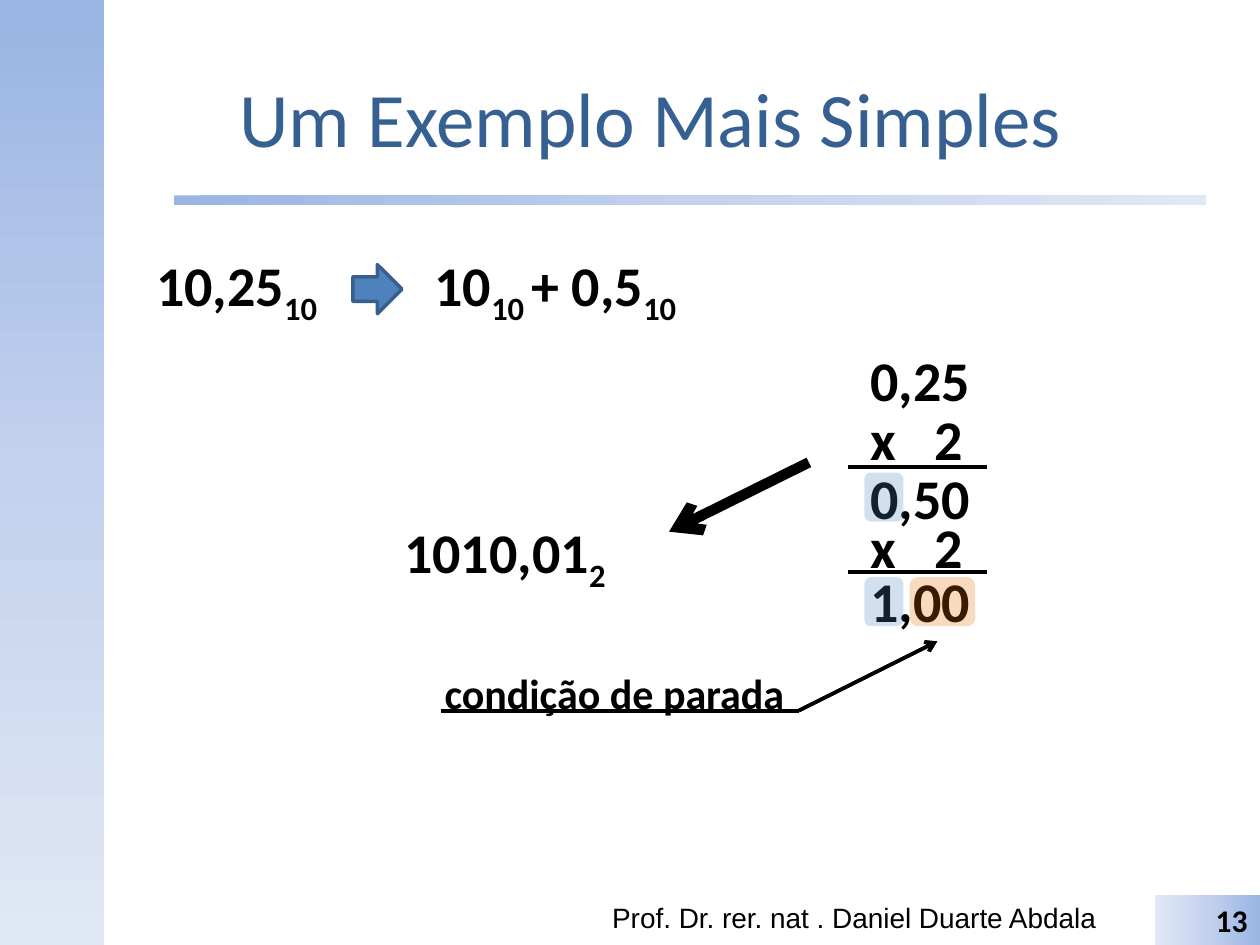
"""Build the slide that converts 10,25 from decimal to binary."""
from copy import deepcopy

from lxml import etree
from pptx import Presentation, util as u
from pptx.dml.color import RGBColor
from pptx.enum import shapes, text
from pptx.oxml.ns import qn

BLACK = "000000"
BLUE = "4F81BD"
ORANGE = "E46C0A"
GRADIENT = [(0, "9AB5E4"), (0.5, "C2D1ED"), (1, "E1E8F5")]
SHAPE = shapes.MSO_SHAPE
ALIGN = text.PP_ALIGN


def color(value):
    return RGBColor.from_string(value)


class SlideBuilder:
    """Hold the text style and the current slide, and draw its elements."""

    def __init__(self, slide):
        self.slide = slide
        self.style = {"name": "Calibri", "size": u.Pt(32), "bold": True}

    def fill_text(self, shape, parts, anchor=text.MSO_ANCHOR.TOP, align=ALIGN.LEFT,
                  font_color=BLACK, tab=None, **changes):
        frame = shape.text_frame
        frame.word_wrap = True
        frame.vertical_anchor = anchor
        paragraph = frame.paragraphs[0]
        paragraph.alignment = align
        if tab:
            tabs = etree.SubElement(paragraph._p.get_or_add_pPr(), qn("a:tabLst"))
            etree.SubElement(tabs, qn("a:tab"), pos=str(u.Inches(tab)), algn="l")
        for index, part in enumerate(parts):
            run = paragraph.add_run()
            run.text = part
            for name, value in {**self.style, **changes}.items():
                setattr(run.font, name, value)
            run.font.color.rgb = color(font_color)
            if index % 2:
                run._r.get_or_add_rPr().set("baseline", "-25000")

    def title(self, words, *box):
        shape = self.slide.shapes.title
        for name, value in zip(("left", "top", "width", "height"), box):
            setattr(shape, name, u.Inches(value))
        self.fill_text(shape, [words], text.MSO_ANCHOR.MIDDLE, ALIGN.CENTER,
                       "376092", size=u.Pt(44), bold=False)

    def label(self, parts, *box, **changes):
        shape = self.slide.shapes.add_textbox(*map(u.Inches, box))
        self.fill_text(shape, parts, **changes)

    def shape(self, kind, *box, fill=None, alpha=None, outline=None):
        shape = self.slide.shapes.add_shape(kind, *map(u.Inches, box))
        shape.shadow.inherit = False
        if fill:
            shape.fill.solid()
            shape.fill.fore_color.rgb = color(fill)
        if alpha:
            fill_color = shape._element.spPr.find(qn("a:solidFill"))[0]
            etree.SubElement(fill_color, qn("a:alpha"), val=str(alpha * 1000))
        if outline:
            shape.line.color.rgb = color(outline)
            shape.line.width = u.Pt(2)
        else:
            shape.line.fill.background()
        return shape

    def gradient(self, kind, *box, angle=0):
        shape = self.shape(kind, *box)
        shape.fill.gradient()
        shape.fill.gradient_angle = angle
        stops = shape._element.spPr.find(qn("a:gradFill")).find(qn("a:gsLst"))
        stops.insert(1, deepcopy(stops[0]))
        for stop, (position, value) in zip(shape.fill.gradient_stops, GRADIENT):
            stop.position = position
            stop.color.rgb = color(value)
        return shape

    def line(self, *ends, width=2.25, arrow=False):
        connector = self.slide.shapes.add_connector(
            shapes.MSO_CONNECTOR.STRAIGHT, *map(u.Inches, ends))
        connector.line.color.rgb = color(BLACK)
        connector.line.width = u.Pt(width)
        if arrow:
            outline = connector._element.spPr.find(qn("a:ln"))
            etree.SubElement(outline, qn("a:tailEnd"), type="arrow")
        etree.SubElement(connector._element.spPr, qn("a:effectLst"))


def main():
    presentation = Presentation()
    presentation.slide_width = u.Inches(10)
    presentation.slide_height = u.Inches(7.5)
    slide = presentation.slides.add_slide(presentation.slide_layouts[5])
    builder = SlideBuilder(slide)

    builder.gradient(SHAPE.RECTANGLE, 0, 0, 0.83, 7.5, angle=270)
    builder.gradient(SHAPE.ROUNDED_RECTANGLE, 1.38, 1.55, 8.19, 0.08)
    builder.title("Um Exemplo Mais Simples", 0.83, 0.3, 8.67, 1.25)
    builder.label(["Prof. Dr. rer. nat . Daniel Duarte Abdala"], 4.76, 7.1, 4.19, 0.4,
                  name="Arial", size=u.Pt(16), bold=False)
    number = builder.gradient(SHAPE.RECTANGLE, 9.17, 7.1, 0.83, 0.4, angle=180)
    builder.fill_text(number, ["13"], align=ALIGN.RIGHT, size=u.Pt(18))

    builder.label(["10,25", "10"], 1.14, 1.94, 1.57, 0.64)
    builder.shape(SHAPE.RIGHT_ARROW, 2.8, 2.1, 0.39, 0.39, fill=BLUE, outline="3A5F8C")
    builder.label(["10", "10 ", "+ 0,5", "10"], 3.35, 1.94, 2.52, 0.64)

    steps = [("0,25", 2.69), ("x\t2", 3.16), ("0,50", 3.63), ("x\t2", 4.02), ("1,00", 4.45)]
    for words, top in steps:
        builder.label([words], 6.81, top, 1.26, 0.64, tab=0.51)
    for rule, digit in ((3.71, 3.75), (4.54, 4.58)):
        builder.line(6.73, rule, 7.83, rule)
        builder.shape(SHAPE.ROUNDED_RECTANGLE, 6.86, digit, 0.31, 0.39, fill=BLUE, alpha=25)
    builder.shape(SHAPE.ROUNDED_RECTANGLE, 7.22, 4.58, 0.52, 0.39, fill=ORANGE, alpha=25)

    builder.line(6.34, 5.64, 7.44, 5.09, arrow=True)
    builder.line(6.34, 5.64, 3.5, 5.64)
    builder.label(["condição de parada"], 3.43, 5.25, 3.07, 0.5, size=u.Pt(24))
    builder.line(6.42, 3.67, 5.31, 4.22, width=6, arrow=True)
    builder.label(["1010,01", "2"], 3.11, 4.06, 2.52, 0.64)

    presentation.save("out.pptx")


if __name__ == "__main__":
    main()
